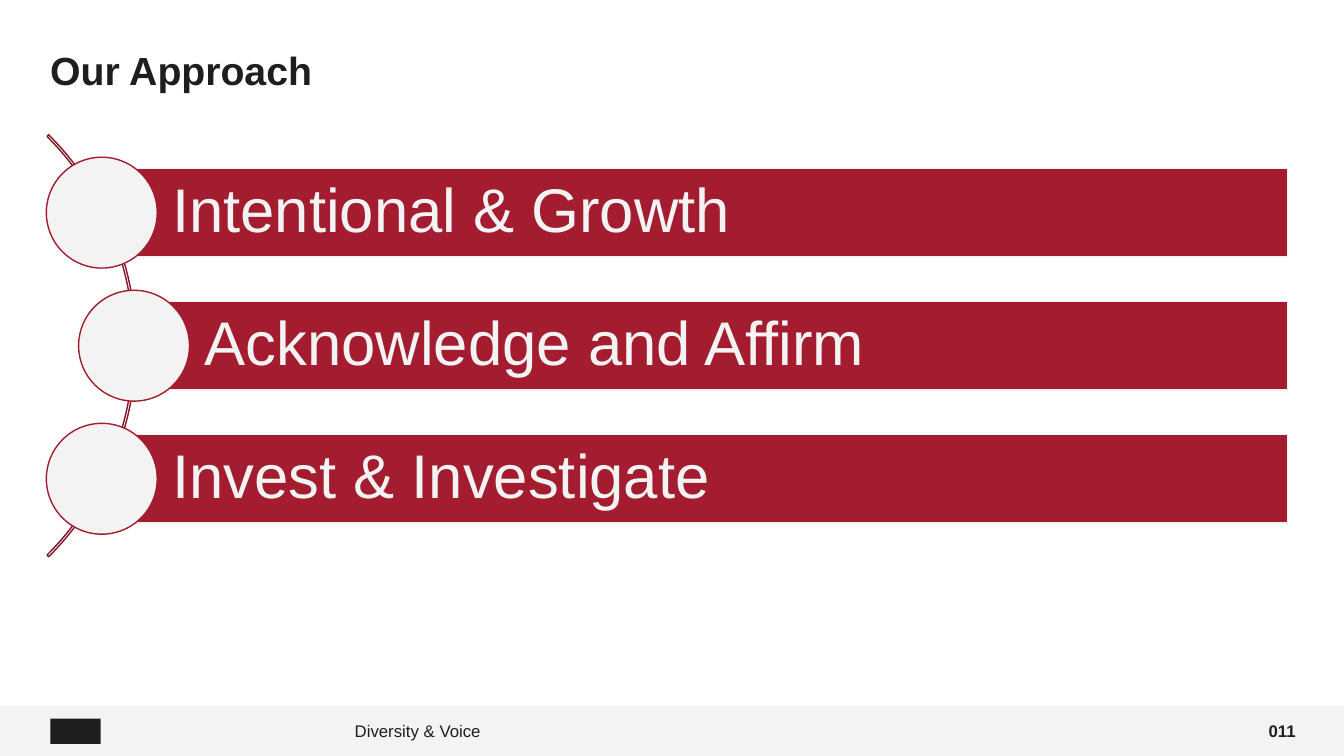
from pptx import Presentation
from pptx.dml.color import RGBColor
from pptx.enum.shapes import MSO_SHAPE
from pptx.enum.text import MSO_ANCHOR, PP_ALIGN
from pptx.util import Inches, Pt

RECTANGLE, OVAL, ARC = MSO_SHAPE.RECTANGLE, MSO_SHAPE.OVAL, MSO_SHAPE.BLOCK_ARC
MIDDLE = MSO_ANCHOR.MIDDLE
LEFT, RIGHT = PP_ALIGN.LEFT, PP_ALIGN.RIGHT
CRIMSON = RGBColor(0xA4, 0x1C, 0x2F)
DARK_CRIMSON = RGBColor(0x83, 0x16, 0x26)
LIGHT = RGBColor(0xF3, 0xF3, 0xF3)
INK = RGBColor(0x1E, 0x1E, 0x1E)

deck = Presentation()
deck.slide_width, deck.slide_height = Inches(13.33), Inches(7.5)
page = deck.slides.add_slide(deck.slide_layouts[6])


def add_box(kind, place, fill=None, line=None):
    box = page.shapes.add_shape(kind, *map(Inches, place))
    box.shadow.inherit = False
    if fill is None:
        box.fill.background()
    else:
        box.fill.solid()
        box.fill.fore_color.rgb = fill
    if line is None:
        box.line.fill.background()
    else:
        box.line.color.rgb = line
        box.line.width = Pt(1)
    return box


def write(box, text, size, color, bold=False, align=LEFT, spacing=None,
          insets=(0.1, 0.05, 0.1, 0.05)):
    frame = box.text_frame
    left, top, right, bottom = map(Inches, insets)
    frame_format = {"word_wrap": True, "vertical_anchor": MIDDLE,
                    "margin_left": left, "margin_top": top,
                    "margin_right": right, "margin_bottom": bottom}
    for name, value in frame_format.items():
        setattr(frame, name, value)
    para = frame.paragraphs[0]
    para.alignment = align
    para.line_spacing = spacing
    span = para.add_run()
    span.text = text
    for name, value in {"name": "Arial", "size": Pt(size), "bold": bold}.items():
        setattr(span.font, name, value)
    span.font.color.rgb = color


add_box(RECTANGLE, (0, 7, 13.33, 0.5), LIGHT)
add_box(RECTANGLE, (0.5, 7.13, 0.5, 0.25), INK)

labels = [
    ("Diversity & Voice", (3.42, 7.05, 8.8, 0.4), 12, False, LEFT, None),
    ("011", (12.22, 7.05, 0.73, 0.4), 12, True, RIGHT, None),
    ("Our Approach", (0.4, 0.28, 12.46, 0.66), 28, True, LEFT, Pt(45)),
]
for text, place, size, bold, align, spacing in labels:
    label = page.shapes.add_textbox(*map(Inches, place))
    write(label, text, size, INK, bold, align, spacing)

arc = add_box(ARC, (-4.57, 0.47, 5.92, 5.92), line=DARK_CRIMSON)
for index, value in enumerate((189, 27, 0.004)):
    arc.adjustments[index] = value

BAR_RIGHT, BAR_HEIGHT, CIRCLE_SIZE, ROW_STEP = 12.77, 0.88, 1.1, 1.32
approaches = [
    ("Intentional & Growth", 1.01),
    ("Acknowledge and Affirm", 1.33),
    ("Invest & Investigate", 1.01),
]
for row, (text, left) in enumerate(approaches):
    middle = 2.11 + row * ROW_STEP
    bar = add_box(RECTANGLE, (left, middle - BAR_HEIGHT / 2, BAR_RIGHT - left, BAR_HEIGHT),
                  CRIMSON, LIGHT)
    write(bar, text, 44, LIGHT, spacing=0.9, insets=(0.7, 0.12, 0.12, 0.12))
    add_box(OVAL, (left - CIRCLE_SIZE / 2, middle - CIRCLE_SIZE / 2, CIRCLE_SIZE, CIRCLE_SIZE),
            LIGHT, CRIMSON)

deck.save("out.pptx")
